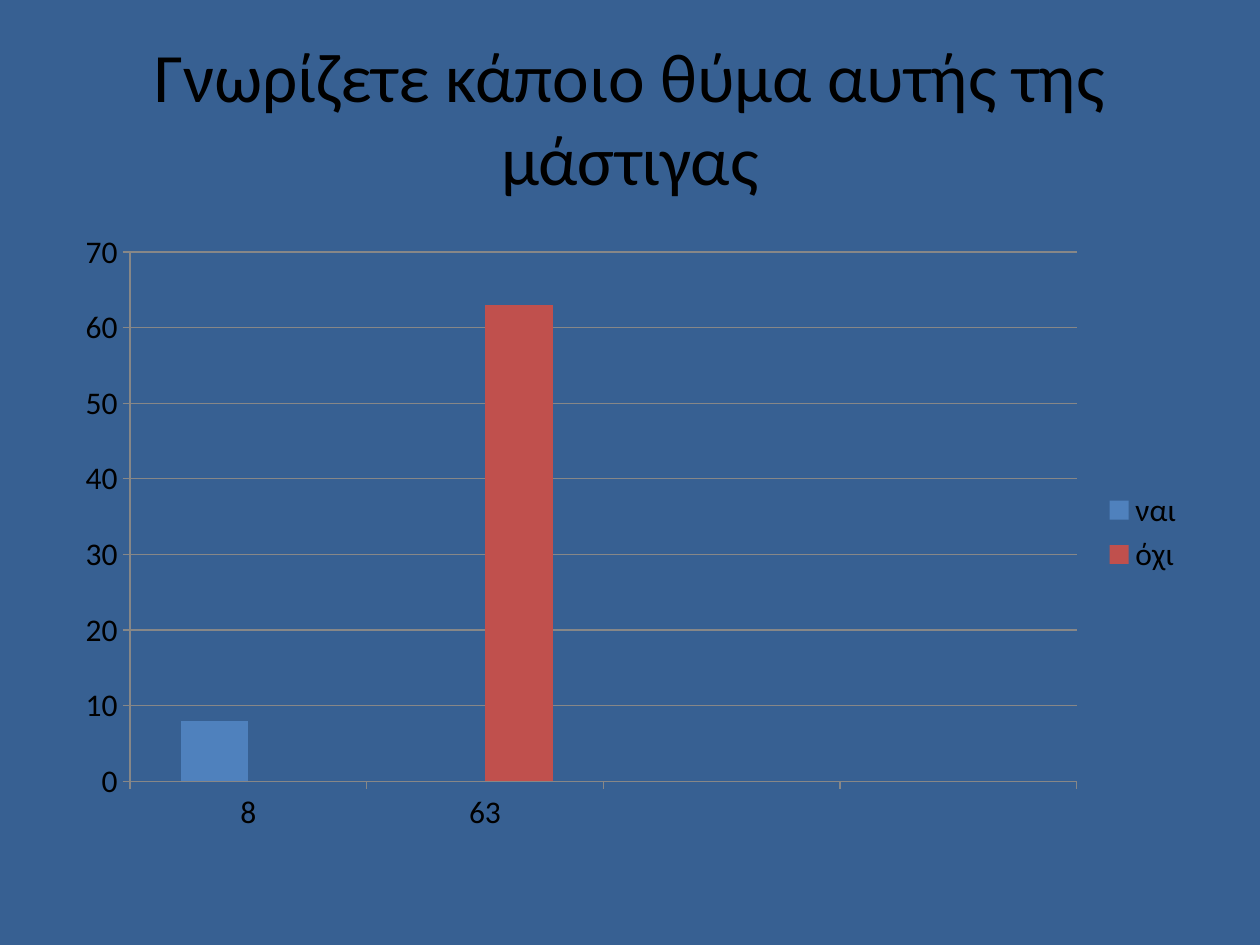
from dataclasses import dataclass

from pptx import Presentation
from pptx.chart.axis import _BaseAxis
from pptx.chart.chart import Chart
from pptx.chart.data import CategoryChartData
from pptx.dml.color import RGBColor
from pptx.enum.chart import XL_CHART_TYPE, XL_LEGEND_POSITION, XL_TICK_MARK
from pptx.enum.text import MSO_ANCHOR, MSO_AUTO_SIZE, PP_ALIGN
from pptx.slide import Slide
from pptx.text.text import Font
from pptx.util import Pt


@dataclass(frozen=True)
class Theme:
    background: RGBColor = RGBColor(0x37, 0x60, 0x92)
    text: RGBColor = RGBColor(0, 0, 0)
    axis: RGBColor = RGBColor(0x87, 0x87, 0x87)
    typeface: str = "Calibri"
    title_size: float = 39.6
    chart_size: float = 18


@dataclass(frozen=True)
class Answer:
    name: str
    count: int
    color: RGBColor


THEME = Theme()
CATEGORY_COUNT = 4
ANSWERS = [
    Answer("ναι", 8, RGBColor(0x4F, 0x81, 0xBD)),
    Answer("όχι", 63, RGBColor(0xC0, 0x50, 0x4D)),
]


def style_font(font: Font, size: float) -> None:
    font.name = THEME.typeface
    font.size = Pt(size)
    font.color.rgb = THEME.text


def add_title(slide: Slide, text: str) -> None:
    title = slide.shapes.title
    title.left, title.top, title.width, title.height = Pt(36), Pt(21.6), Pt(648), Pt(90)
    frame = title.text_frame
    frame.text = text
    frame.word_wrap = True
    frame.auto_size = MSO_AUTO_SIZE.NONE
    frame.vertical_anchor = MSO_ANCHOR.MIDDLE
    paragraph = frame.paragraphs[0]
    paragraph.alignment = PP_ALIGN.CENTER
    style_font(paragraph.font, THEME.title_size)


def style_axis(axis: _BaseAxis, gridlines: bool) -> None:
    axis.major_tick_mark = XL_TICK_MARK.OUTSIDE
    axis.minor_tick_mark = XL_TICK_MARK.NONE
    axis.has_major_gridlines = gridlines
    lines = [axis.format.line]
    if gridlines:
        lines.append(axis.major_gridlines.format.line)
    for line in lines:
        line.color.rgb = THEME.axis
        line.width = Pt(0.75)


def add_answer_chart(slide: Slide, answers: list[Answer]) -> Chart:
    data = CategoryChartData(number_format="General")
    labels = [str(answer.count) for answer in answers]
    data.categories = labels + [""] * (CATEGORY_COUNT - len(labels))
    for index, answer in enumerate(answers):
        values = [answer.count if place == index else None for place in range(CATEGORY_COUNT)]
        data.add_series(answer.name, values)

    chart = slide.shapes.add_chart(
        XL_CHART_TYPE.COLUMN_CLUSTERED, Pt(36), Pt(126), Pt(648), Pt(356.4), data
    ).chart
    style_font(chart.font, THEME.chart_size)
    chart.has_title = False
    chart.has_legend = True
    chart.legend.position = XL_LEGEND_POSITION.RIGHT
    chart.legend.include_in_layout = False
    style_axis(chart.category_axis, gridlines=False)
    style_axis(chart.value_axis, gridlines=True)
    chart.value_axis.minimum_scale = 0
    chart.value_axis.maximum_scale = 70
    chart.value_axis.major_unit = 10

    plot = chart.plots[0]
    plot.gap_width = 150
    plot.vary_by_categories = False
    for series, answer in zip(plot.series, answers):
        series.format.fill.solid()
        series.format.fill.fore_color.rgb = answer.color
    return chart


def main() -> None:
    """Build the survey slide with its title and column chart."""
    presentation = Presentation()
    presentation.slide_width, presentation.slide_height = Pt(720), Pt(540)
    slide = presentation.slides.add_slide(presentation.slide_layouts[5])
    slide.background.fill.solid()
    slide.background.fill.fore_color.rgb = THEME.background
    add_title(slide, "Γνωρίζετε κάποιο θύμα αυτής της μάστιγας")
    add_answer_chart(slide, ANSWERS)
    presentation.save("out.pptx")


if __name__ == "__main__":
    main()
